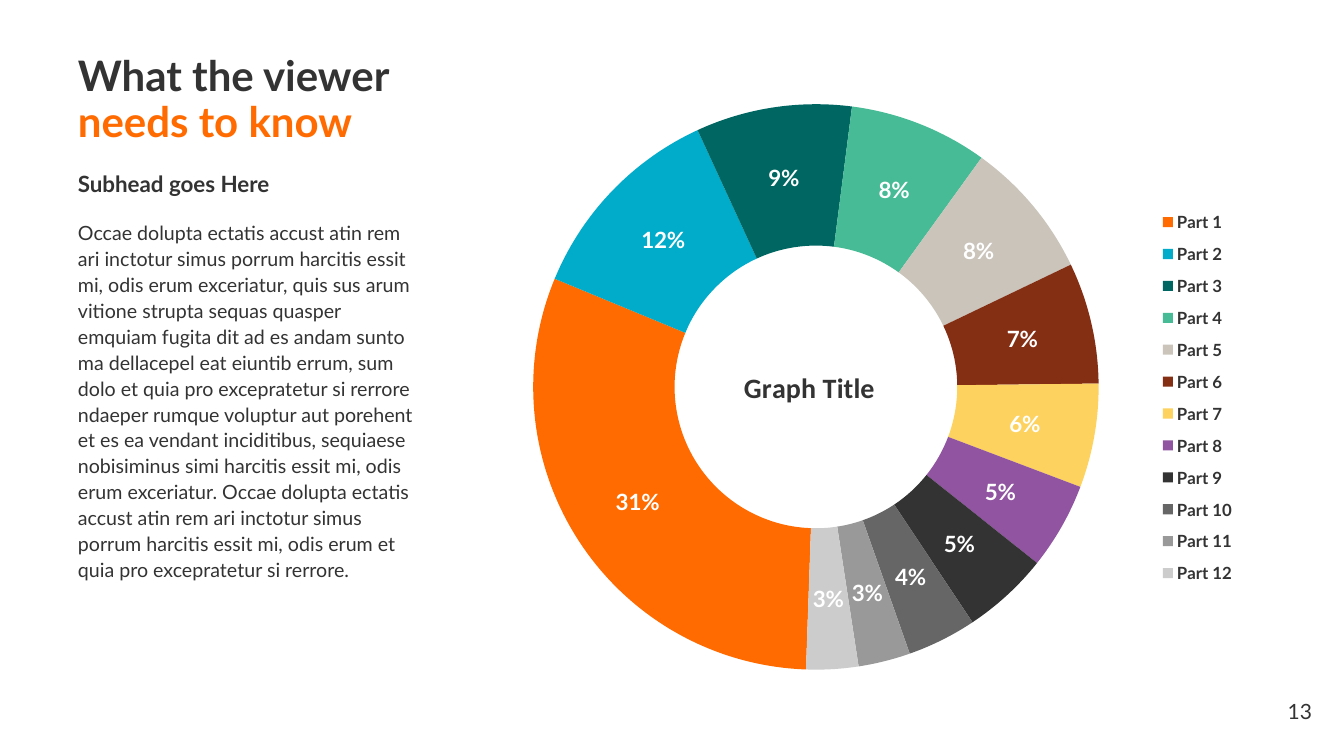
from lxml import etree
from pptx import Presentation
from pptx.chart.data import CategoryChartData
from pptx.dml.color import RGBColor
from pptx.enum.chart import XL_CHART_TYPE, XL_LEGEND_POSITION
from pptx.enum.text import MSO_ANCHOR, PP_ALIGN
from pptx.oxml.ns import qn
from pptx.util import Pt

DOUGHNUT = XL_CHART_TYPE.DOUGHNUT
LEGEND_LEFT = XL_LEGEND_POSITION.LEFT
TOP, MIDDLE = MSO_ANCHOR.TOP, MSO_ANCHOR.MIDDLE
LEFT, RIGHT = PP_ALIGN.LEFT, PP_ALIGN.RIGHT

EMU_PER_PX = 914400 / 100.8
THEME = {
    "font": "Lato",
    "chart_font": "Calibri",
    "ink": "333333",
    "accent": "FF6B00",
    "label": "FFFFFF",
    "slices": ["FF6B00", "00ACCA", "006661", "46BB95", "CAC4BB", "842E14",
               "FDD25F", "9054A1", "333333", "666666", "999999", "CCCCCC"],
    "title_size": 30,
    "subhead_size": 16,
    "body_size": 14,
    "number_size": 15,
    "graph_title_size": 20,
    "label_size": 16,
    "legend_size": 12,
}
SHARES = [31, 12, 9, 8, 8, 7, 6, 5, 5, 4, 3, 3]
BODY = (
    "Occae dolupta ectatis accust atin rem ari inctotur simus porrum harcitis "
    "essit mi, odis erum exceriatur, quis sus arum vitione strupta sequas quasper "
    "emquiam fugita dit ad es andam sunto ma dellacepel eat eiuntib errum, sum "
    "dolo et quia pro excepratetur si rerrore ndaeper rumque voluptur aut porehent "
    "et es ea vendant inciditibus, sequiaese nobisiminus simi harcitis essit mi, "
    "odis erum exceriatur. Occae dolupta ectatis accust atin rem ari inctotur simus "
    "porrum harcitis essit mi, odis erum et quia pro excepratetur si rerrore."
)


def style_font(font, size, color, bold, name=THEME["font"]):
    font.name = name
    font.size = Pt(size)
    font.bold = bold
    font.color.rgb = RGBColor.from_string(color)


def place_chart_part(part, index, **position):
    for old_layout in part.findall(qn("c:layout")):
        part.remove(old_layout)
    layout = etree.Element(qn("c:layout"))
    manual = etree.SubElement(layout, qn("c:manualLayout"))
    if part.tag == qn("c:plotArea"):
        etree.SubElement(manual, qn("c:layoutTarget")).set("val", "inner")
    for mode in ("xMode", "yMode"):
        etree.SubElement(manual, qn("c:" + mode)).set("val", "edge")
    for key, value in position.items():
        etree.SubElement(manual, qn("c:" + key)).set("val", str(value))
    part.insert(index, layout)


presentation = Presentation()
presentation.slide_width = round(1344 * EMU_PER_PX)
presentation.slide_height = round(756 * EMU_PER_PX)
slide = presentation.slides.add_slide(presentation.slide_layouts[6])

chart_data = CategoryChartData()
chart_data.categories = [f"Part {number}" for number in range(1, len(SHARES) + 1)]
chart_data.add_series("Series 1", SHARES)
chart_box = [round(px * EMU_PER_PX) for px in (255, -40, 1008, 775)]
chart = slide.shapes.add_chart(DOUGHNUT, *chart_box, chart_data).chart
style_font(chart.font, 10, "000000", False, THEME["chart_font"])

chart.has_title = True
title_paragraph = chart.chart_title.text_frame.paragraphs[0]
title_paragraph.text = "Graph Title"
style_font(title_paragraph.font, THEME["graph_title_size"], THEME["ink"], True,
           THEME["chart_font"])
chart.chart_title.include_in_layout = False

chart.has_legend = True
chart.legend.position = LEGEND_LEFT
chart.legend.include_in_layout = False
style_font(chart.legend.font, THEME["legend_size"], THEME["ink"], True)

plot = chart.plots[0]
plot.vary_by_categories = True
plot.has_data_labels = True
labels = plot.data_labels
labels.show_value = False
labels.show_percentage = True
labels.number_format = "0%"
labels.number_format_is_linked = False
style_font(labels.font, THEME["label_size"], THEME["label"], True)
for index, color in enumerate(THEME["slices"]):
    slice_format = plot.series[0].points[index].format
    slice_format.fill.solid()
    slice_format.fill.fore_color.rgb = RGBColor.from_string(color)
    slice_format.line.fill.background()

chart_root = chart.element.find(qn("c:chart"))
plot_area = chart_root.find(qn("c:plotArea"))
place_chart_part(chart_root.find(qn("c:title")), 1, x=0.48, y=0.52)
place_chart_part(plot_area, 0, x=0.276, y=0.186, w=0.561, h=0.73)
place_chart_part(chart_root.find(qn("c:legend")), 1, x=0.89, y=0.31, w=0.09, h=0.51)
doughnut = plot_area.find(qn("c:doughnutChart"))
doughnut.find(qn("c:firstSliceAng")).set("val", "182")
doughnut.find(qn("c:holeSize")).set("val", "62")

ink, accent = THEME["ink"], THEME["accent"]
text_boxes = [
    ((68, 56, 402, 90), [("What the viewer ", ink), ("needs to know", accent)],
     THEME["title_size"], True, 0.9, MIDDLE, LEFT),
    ((68, 168, 402, 42), [("Subhead goes Here", ink)],
     THEME["subhead_size"], True, 0.9, TOP, LEFT),
    ((68, 214, 363, 411), [(BODY, ink)],
     THEME["body_size"], False, 1.1, TOP, LEFT),
    ((1232, 694, 90, 35), [("13", ink)],
     THEME["number_size"], False, 1.0, TOP, RIGHT),
]
for box, runs, size, bold, spacing, anchor, alignment in text_boxes:
    text_box = slide.shapes.add_textbox(*[round(px * EMU_PER_PX) for px in box])
    frame = text_box.text_frame
    frame.word_wrap = True
    frame.vertical_anchor = anchor
    paragraph = frame.paragraphs[0]
    paragraph.alignment = alignment
    paragraph.line_spacing = spacing
    style_font(paragraph.font, size, ink, bold)
    for text, color in runs:
        run = paragraph.add_run()
        run.text = text
        if color != ink:
            run.font.color.rgb = RGBColor.from_string(color)

presentation.save("out.pptx")
